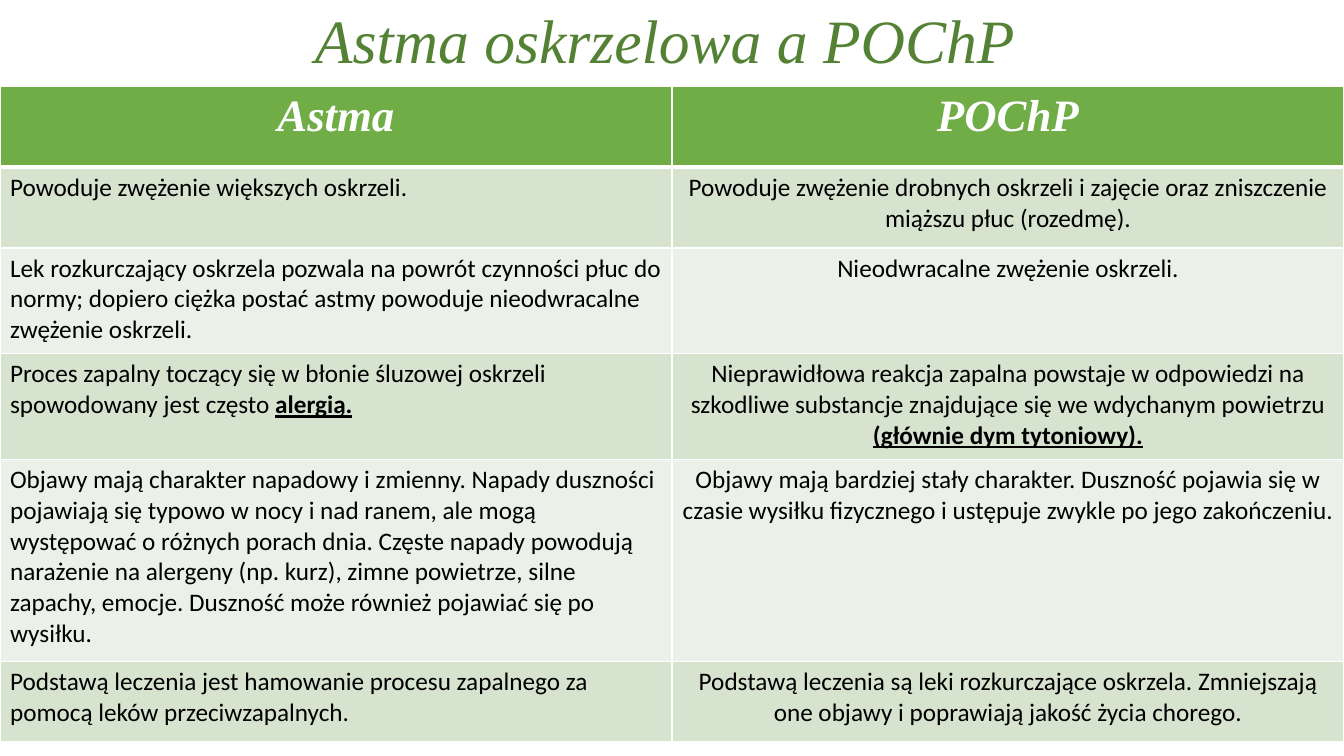
import lxml.etree
import pptx
import pptx.dml.color
import pptx.enum.text
import pptx.oxml.ns
import pptx.util

ALIGN = pptx.enum.text.PP_ALIGN
HEADINGS = ("Astma", "POChP")
# Text after the bar is emphasised.
COMPARISON = [
    ("Powoduje zwężenie większych oskrzeli.",
     "Powoduje zwężenie drobnych oskrzeli i zajęcie oraz zniszczenie miąższu płuc (rozedmę)."),
    ("Lek rozkurczający oskrzela pozwala na powrót czynności płuc do normy; dopiero ciężka "
     "postać astmy powoduje nieodwracalne zwężenie oskrzeli.",
     "Nieodwracalne zwężenie oskrzeli."),
    ("Proces zapalny toczący się w błonie śluzowej oskrzeli spowodowany jest często |alergią.",
     "Nieprawidłowa reakcja zapalna powstaje w odpowiedzi na szkodliwe substancje znajdujące "
     "się we wdychanym powietrzu |(głównie dym tytoniowy)."),
    ("Objawy mają charakter napadowy i zmienny. Napady duszności pojawiają się typowo "
     "w nocy i nad ranem, ale mogą występować o różnych porach dnia. Częste napady "
     "powodują narażenie na alergeny (np. kurz), zimne powietrze, silne zapachy, emocje. "
     "Duszność może również pojawiać się po wysiłku.",
     "Objawy mają bardziej stały charakter. Duszność pojawia się w czasie wysiłku "
     "fizycznego i ustępuje zwykle po jego zakończeniu."),
    ("Podstawą leczenia jest hamowanie procesu zapalnego za pomocą leków przeciwzapalnych.",
     "Podstawą leczenia są leki rozkurczające oskrzela. Zmniejszają one objawy "
     "i poprawiają jakość życia chorego."),
]
ROW_PERCENTS = (10.67, 10.67, 14, 14, 26.67, 10.67)


def color(hex_code):
    return pptx.dml.color.RGBColor.from_string(hex_code)


class ComparisonSlide:
    """Holds the style and the slide; lengths are percents of the slide's size."""
    serif, sans = "Times New Roman", "Calibri"
    title_green, header_green = "548235", "70AD47"
    bands = ("D5E3CF", "EBF1E9")
    white, black = "FFFFFF", "000000"

    def __init__(self, deck):
        self.width, self.height = deck.slide_width, deck.slide_height
        self.slide = deck.slides.add_slide(deck.slide_layouts[5])

    def across(self, percent):
        return round(self.width * percent / 100)

    def down(self, percent):
        return round(self.height * percent / 100)

    def style(self, span, font, size, hex_code, bold=False, italic=False, underline=False):
        span.font.name = font
        span.font.size = pptx.util.Pt(size)
        span.font.color.rgb = color(hex_code)
        span.font.bold, span.font.italic, span.font.underline = bold, italic, underline

    def title(self, text, left, top, width, height):
        box = self.slide.shapes.title
        box.left, box.top = self.across(left), self.down(top)
        box.width, box.height = self.across(width), self.down(height)
        frame = box.text_frame
        frame.text = text
        frame.word_wrap = True
        frame.auto_size = pptx.enum.text.MSO_AUTO_SIZE.NONE
        frame.vertical_anchor = pptx.enum.text.MSO_ANCHOR.MIDDLE
        para = frame.paragraphs[0]
        para.alignment, para.line_spacing = ALIGN.CENTER, 0.9
        self.style(para.runs[0], self.serif, 44, self.title_green, italic=True)

    def table(self, top, row_percents, headings, rows):
        frame = self.slide.shapes.add_table(
            len(row_percents), len(headings), 0, self.down(top),
            self.width, self.down(sum(row_percents)))
        table = frame.table
        for row, percent in zip(table.rows, row_percents):
            row.height = self.down(percent)
        for column, heading in enumerate(headings):
            self.header_cell(table.cell(0, column), heading)
        for number, texts in enumerate(rows):
            for column, text in enumerate(texts):
                self.body_cell(table.cell(number + 1, column), text, self.bands[number % 2],
                               ALIGN.CENTER if column else ALIGN.LEFT, 1 if number else 3)

    def header_cell(self, cell, text):
        cell.text_frame.text = text
        para = cell.text_frame.paragraphs[0]
        para.alignment = ALIGN.CENTER
        self.style(para.runs[0], self.serif, 32, self.white, bold=True, italic=True)
        self.paint(cell, self.header_green, bottom=3)

    def body_cell(self, cell, text, fill, alignment, top_border):
        plain, _, emphasis = text.partition("|")
        cell.text_frame.text = plain
        para = cell.text_frame.paragraphs[0]
        para.alignment = alignment
        self.style(para.runs[0], self.sans, 18, self.black)
        if emphasis:
            span = para.add_run()
            span.text = emphasis
            self.style(span, self.sans, 18, self.black, bold=True, underline=True)
        self.paint(cell, fill, top=top_border)

    def paint(self, cell, fill, top=1, bottom=1):
        """Fill the cell and give it white borders, widths in points."""
        cell.fill.solid()
        cell.fill.fore_color.rgb = color(fill)
        properties = cell._tc.get_or_add_tcPr()
        qn = pptx.oxml.ns.qn
        borders = (("a:lnL", 1), ("a:lnR", 1), ("a:lnT", top), ("a:lnB", bottom))
        for position, (tag, points) in enumerate(borders):
            line = lxml.etree.Element(qn(tag), w=str(pptx.util.Pt(points)))
            solid = lxml.etree.SubElement(line, qn("a:solidFill"))
            lxml.etree.SubElement(solid, qn("a:srgbClr"), val=self.white)
            properties.insert(position, line)


def main():
    deck = pptx.Presentation()
    deck.slide_width = pptx.util.Inches(13.33)
    deck.slide_height = pptx.util.Inches(7.5)
    page = ComparisonSlide(deck)
    page.title("Astma oskrzelowa a POChP ", 6.9, 0, 86.27, 11.47)
    page.table(11.47, ROW_PERCENTS, HEADINGS, COMPARISON)
    deck.save("out.pptx")


if __name__ == "__main__":
    main()
